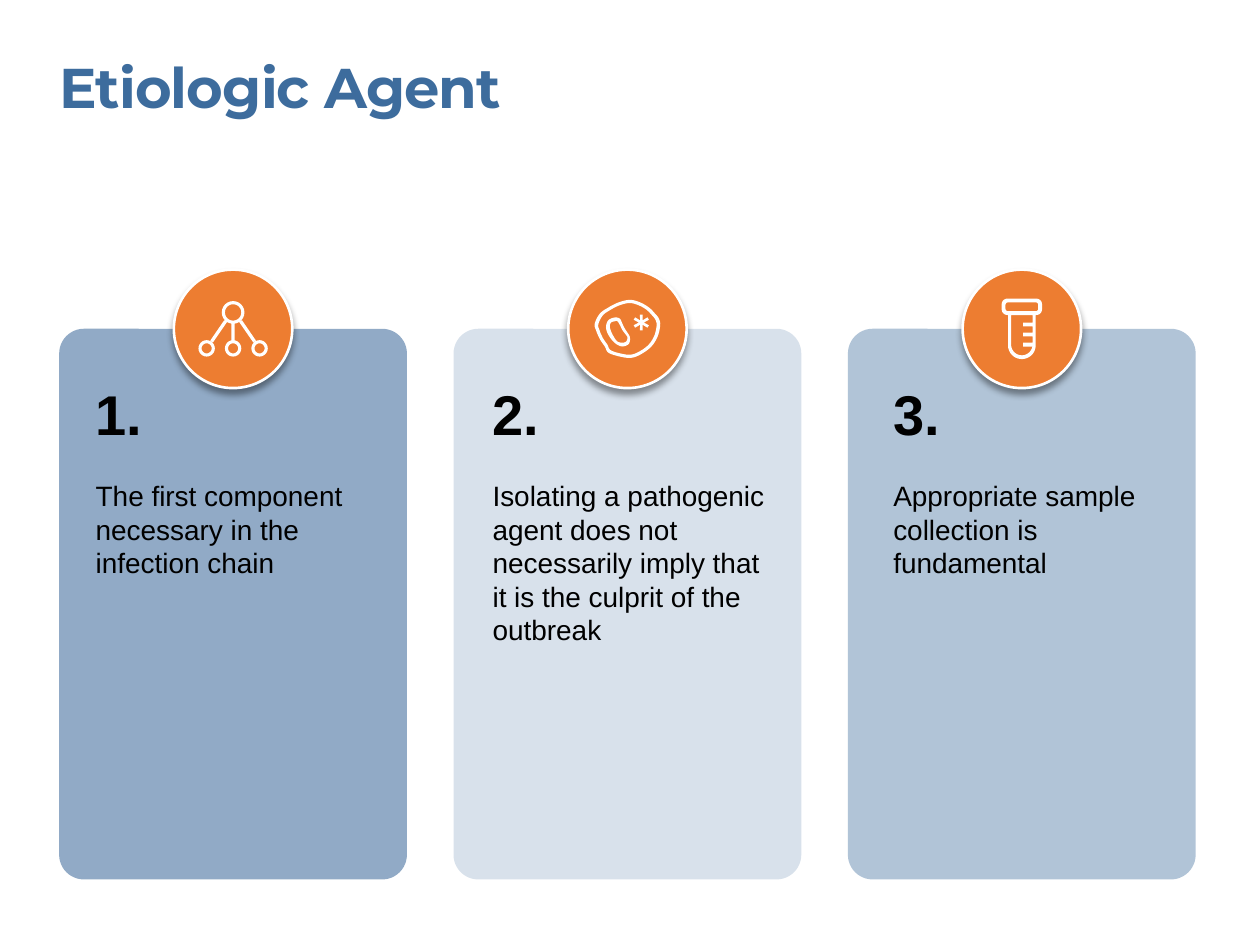
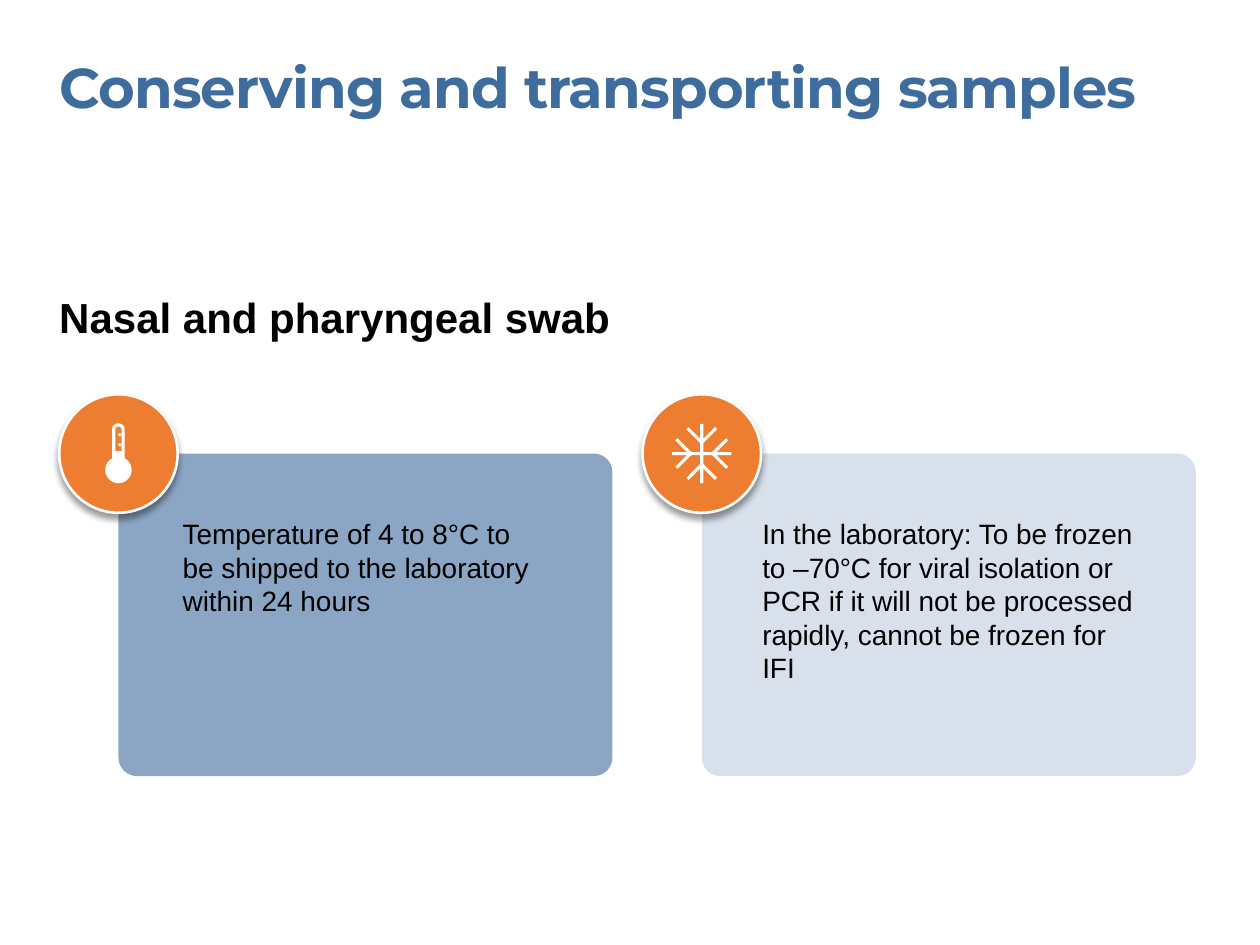
from dataclasses import dataclass
from math import cos, radians, sin

from lxml import etree
from pptx import Presentation
from pptx.dml.color import RGBColor
from pptx.enum.shapes import MSO_SHAPE
from pptx.enum.text import MSO_ANCHOR, MSO_AUTO_SIZE, PP_ALIGN
from pptx.oxml.ns import qn
from pptx.util import Inches, Pt

ROUNDED, OVAL = MSO_SHAPE.ROUNDED_RECTANGLE, MSO_SHAPE.OVAL
LEFT, TOP, NO_FIT = PP_ALIGN.LEFT, MSO_ANCHOR.TOP, MSO_AUTO_SIZE.NONE
TITLE_AND_CONTENT, TITLE_ONLY = 1, 5


@dataclass(frozen=True)
class Theme:
    blue: str = "3D6C9D"
    soft_blue: str = "91AAC6"
    orange: str = "ED7D31"
    white: str = "FFFFFF"
    black: str = "000000"
    title_font: str = "Montserrat"
    body_font: str = "Arial"
    title_size: float = 32
    number_size: float = 32
    heading_size: float = 24
    body_size: float = 16
    number_gap: float = 18.4
    # Shares of the slide, in percent
    margin: float = 4.7
    content_width: float = 90.2
    radius: float = 4.7


THEME = Theme()


# Icon outlines: points around the disc centre, in thousandths of the slide width

def arc(x, y, radius, start, end, steps=24):
    angles = [radians(start + (end - start) * i / steps) for i in range(steps + 1)]
    return [(x + radius * cos(a), y + radius * sin(a)) for a in angles]


def ring(x, y, outer, inner):
    return [arc(x, y, outer, 0, 360), arc(x, y, inner, 0, 360)]


def bar(x1, y1, x2, y2, half=1.3):
    length = ((x2 - x1) ** 2 + (y2 - y1) ** 2) ** 0.5
    dx, dy = half * (y1 - y2) / length, half * (x2 - x1) / length
    return [(x1 + dx, y1 + dy), (x2 + dx, y2 + dy), (x2 - dx, y2 - dy), (x1 - dx, y1 - dy)]


def rounded_box(half_width, top, bottom, radius):
    x = half_width - radius
    corners = [(x, bottom - radius, 0), (-x, bottom - radius, 90),
               (-x, top + radius, 180), (x, top + radius, 270)]
    return [point for cx, cy, start in corners
            for point in arc(cx, cy, radius, start, start + 90, 8)]


def smooth(points, steps=5):
    """Closed Catmull-Rom curve through the points."""
    curve, count = [], len(points)
    for i in range(count):
        a, b, c, d = (points[(i + k) % count] for k in (-1, 0, 1, 2))
        for step in range(steps):
            t = step / steps
            curve.append(tuple(
                q + t * (r - p) / 2 + t * t * (2 * p - 5 * q + 4 * r - s) / 2
                + t ** 3 * (3 * q - p - 3 * r + s) / 2
                for p, q, r, s in zip(a, b, c, d)))
    return curve


def network_icon():
    contours = ring(0, -13, 9, 6.5) + [bar(0, -4, 0, 9)]
    for x in (-21, 0, 21):
        contours += ring(x, 15.5, 6.5, 4)
    return contours + [bar(side * 6, -6, side * 17, 10) for side in (-1, 1)]


def cell_icon():
    wall = smooth([(3, 23), (-6, 22), (-15, 19), (-18, 14), (-22, 8), (-25, 1), (-26, -4),
                   (-22, -12), (-15, -17), (-7, -21), (2, -23), (10, -21), (17, -17),
                   (22, -12), (25, -8), (26, -3), (24, 6), (19, 14), (11, 20)])
    nucleus = smooth([(-4, 14), (1, 12), (2, 7), (0, 3), (-2, 0), (-4, -4), (-6, -8),
                      (-10, -9), (-15, -7), (-17, -2), (-16, 3), (-13, 8), (-9, 12)])
    nucleus_hole = smooth([(-4, 11), (-8, 10), (-11, 6), (-13, 2), (-14, -2), (-13, -5),
                           (-10, -6), (-8, -6), (-6, -3), (-4, 1), (-1, 5), (0, 7), (-1, 10)])
    star = []
    for angle in range(30, 390, 60):
        for radius, turn in ((6.4, -10), (6.4, 10), (2, 30)):
            a = radians(angle + turn)
            star.append((11 + radius * cos(a), -5 + radius * sin(a)))
    return [wall, [(x * 0.89, y * 0.89) for x, y in wall], nucleus, nucleus_hole, star]


def tube_icon():
    scale_marks = [point for y in (14, 6, -2)
                   for point in ((8.5, y), (1, y), (1, y - 3), (8.5, y - 3))]
    return [rounded_box(16, -24, -11, 4.5), rounded_box(13, -21, -14, 2),
            [(-11, -11)] + arc(0, 13, 11, 180, 0) + [(11, -11)],
            [(-8.5, -11)] + arc(0, 12.5, 8.5, 180, 10) + scale_marks + [(8.5, -11)]]


def thermometer_icon():
    marks = [point for y in (-6, -14)
             for point in ((2.5, y), (0, y), (0, y - 2), (2.5, y - 2))]
    return [arc(0, 13, 10.5, -62, 242) + arc(0, -19, 5, 180, 360),
            [(-2.5, -2), (2.5, -2)] + marks + arc(0, -19, 2.5, 360, 180)]


def snowflake_icon():
    quarter = [(1.2, -23.5), (1.2, -11.7), (10.5, -21), (12.2, -19.3), (1.2, -8.3),
               (1.2, -1.2), (8.3, -1.2), (19.3, -12.2), (21, -10.5), (11.7, -1.2),
               (23.5, -1.2)]
    outline = []
    for _ in range(4):
        outline += quarter
        quarter = [(-y, x) for x, y in quarter]
    return [outline]


def write(paragraph, text, *, size, bold=False, color=THEME.black,
          font=THEME.body_font, spacing=None, after=0):
    paragraph.alignment = LEFT
    paragraph.space_before, paragraph.space_after = Pt(0), Pt(after)
    run = paragraph.add_run()
    run.text = text
    run.font.name, run.font.size, run.font.bold = font, Pt(size), bold
    run.font.color.rgb = RGBColor.from_string(color)
    if spacing is not None:
        run.font._element.set("spc", str(int(spacing * 100)))


class Deck:
    """Holds the theme and current slide; lengths are percent of the slide."""

    def __init__(self, theme):
        self.theme = theme
        self.presentation = Presentation()
        self.presentation.slide_width = Inches(10)
        self.presentation.slide_height = Inches(7.5)
        self.slide = None

    def x(self, share):
        return round(self.presentation.slide_width * share / 100)

    def y(self, share):
        return round(self.presentation.slide_height * share / 100)

    def box(self, left, top, width, height):
        return self.x(left), self.y(top), self.x(width), self.y(height)

    def columns(self, count, gap):
        width = (self.theme.content_width - gap * (count - 1)) / count
        return [(self.theme.margin + i * (width + gap), width) for i in range(count)]

    def frame(self, shape):
        frame = shape.text_frame
        frame.word_wrap, frame.auto_size, frame.vertical_anchor = True, NO_FIT, TOP
        frame.margin_left = frame.margin_right = frame.margin_top = frame.margin_bottom = 0
        return frame

    def place(self, placeholder, *box):
        (placeholder.left, placeholder.top,
         placeholder.width, placeholder.height) = self.box(*box)
        return self.frame(placeholder).paragraphs[0]

    def add_slide(self, title, layout, title_height):
        self.slide = self.presentation.slides.add_slide(
            self.presentation.slide_layouts[layout])
        paragraph = self.place(self.slide.shapes.title,
                               self.theme.margin, 5.6, 85.5, title_height)
        write(paragraph, title, size=self.theme.title_size, bold=True, spacing=-0.5,
              color=self.theme.blue, font=self.theme.title_font)

    def heading(self, text, top):
        paragraph = self.place(self.slide.placeholders[1], self.theme.margin, top, 78.5, 5.33)
        write(paragraph, text, size=self.theme.heading_size, bold=True)
        properties = paragraph._p.get_or_add_pPr()
        properties.set("marL", "0")
        properties.set("indent", "0")
        etree.SubElement(properties, qn("a:buNone"))

    def paint(self, shape, color, opacity=100):
        shape.shadow.inherit = False
        shape.fill.solid()
        shape.fill.fore_color.rgb = RGBColor.from_string(color)
        shape.line.fill.background()
        if opacity < 100:
            solid = shape._element.spPr.find(qn("a:solidFill"))
            etree.SubElement(solid[0], qn("a:alpha"), val=str(opacity * 1000))

    def card(self, left, top, width, height, color, opacity, corner):
        shape = self.slide.shapes.add_shape(ROUNDED, *self.box(left, top, width, height))
        shape.adjustments[0] = corner
        self.paint(shape, color, opacity)

    def badge(self, center, middle, contours):
        """Orange disc with a soft shadow and a white icon."""
        center, middle, radius = self.x(center), self.y(middle), self.x(self.theme.radius)
        disc = self.slide.shapes.add_shape(
            OVAL, center - radius, middle - radius, 2 * radius, 2 * radius)
        self.paint(disc, self.theme.orange)
        disc.line.color.rgb = RGBColor.from_string(self.theme.white)
        disc.line.width = Pt(1.5)
        effects = disc._element.spPr.find(qn("a:effectLst"))
        shadow = etree.SubElement(effects, qn("a:outerShdw"), blurRad=str(Pt(4)),
                                  dist=str(Pt(3)), dir="5400000", rotWithShape="0")
        tint = etree.SubElement(shadow, qn("a:srgbClr"), val=self.theme.black)
        etree.SubElement(tint, qn("a:alpha"), val="40000")

        builder = None
        for contour in contours:
            points = [(center + self.x(x / 10), middle + self.x(y / 10)) for x, y in contour]
            if builder is None:
                builder = self.slide.shapes.build_freeform(*points[0])
            else:
                builder.move_to(*points[0])
            builder.add_line_segments(points[1:], close=True)
        self.paint(builder.convert_to_shape(), self.theme.white)

    def text(self, left, top, width, height, body, number=None):
        shape = self.slide.shapes.add_textbox(*self.box(left, top, width, height))
        frame = self.frame(shape)
        paragraph = frame.paragraphs[0]
        if number:
            write(paragraph, number, size=self.theme.number_size, bold=True,
                  after=self.theme.number_gap)
            paragraph = frame.add_paragraph()
        write(paragraph, body, size=self.theme.body_size)


def etiologic_agent(deck):
    deck.add_slide("Etiologic Agent", TITLE_ONLY, 7.2)
    card_top = 34.8
    # Colour, opacity, icon, text indent, text width, text height, text
    cards = [
        (THEME.soft_blue, 100, network_icon, 2.9, 22.4, 21.6,
         "The first component necessary in the infection chain"),
        (THEME.blue, 20, cell_icon, 3.1, 21.7, 28.67,
         "Isolating a pathogenic agent does not necessarily imply that it is "
         "the culprit of the outbreak"),
        (THEME.blue, 40, tube_icon, 3.6, 21.4, 21.6,
         "Appropriate sample collection is fundamental"),
    ]
    columns = deck.columns(3, gap=3.7)
    for index, ((left, width), card) in enumerate(zip(columns, cards), 1):
        color, opacity, icon, indent, text_width, text_height, body = card
        deck.card(left, card_top, width, 58.27, color, opacity, 0.071)
        deck.badge(left + width / 2, card_top, icon())
        deck.text(left + indent, 40.13, text_width, text_height, body, number=f"{index}.")


def conserving_samples(deck):
    deck.add_slide("Conserving and transporting samples", TITLE_AND_CONTENT, 14.4)
    deck.heading("Nasal and pharyngeal swab", 30.8)
    card_top = 48
    # Opacity, icon, text indent, text width, text height, text
    cards = [
        (60, thermometer_icon, 5.1, 29, 10.8,
         "Temperature of 4 to 8°C to be shipped to the laboratory within 24 hours"),
        (20, snowflake_icon, 4.8, 29.7, 18,
         "In the laboratory: To be frozen to –70°C for viral isolation or PCR if it "
         "will not be processed rapidly, cannot be frozen for IFI"),
    ]
    for (left, width), card in zip(deck.columns(2, gap=2.4), cards):
        opacity, icon, indent, text_width, text_height, body = card
        # The badge sits on the card's top left corner
        corner = left + THEME.radius
        deck.card(corner, card_top, width - THEME.radius, 34.13, THEME.blue, opacity, 0.057)
        deck.badge(corner, card_top, icon())
        deck.text(corner + indent, 54.67, text_width, text_height, body)


def main():
    deck = Deck(THEME)
    etiologic_agent(deck)
    conserving_samples(deck)
    deck.presentation.save("out.pptx")


if __name__ == "__main__":
    main()
